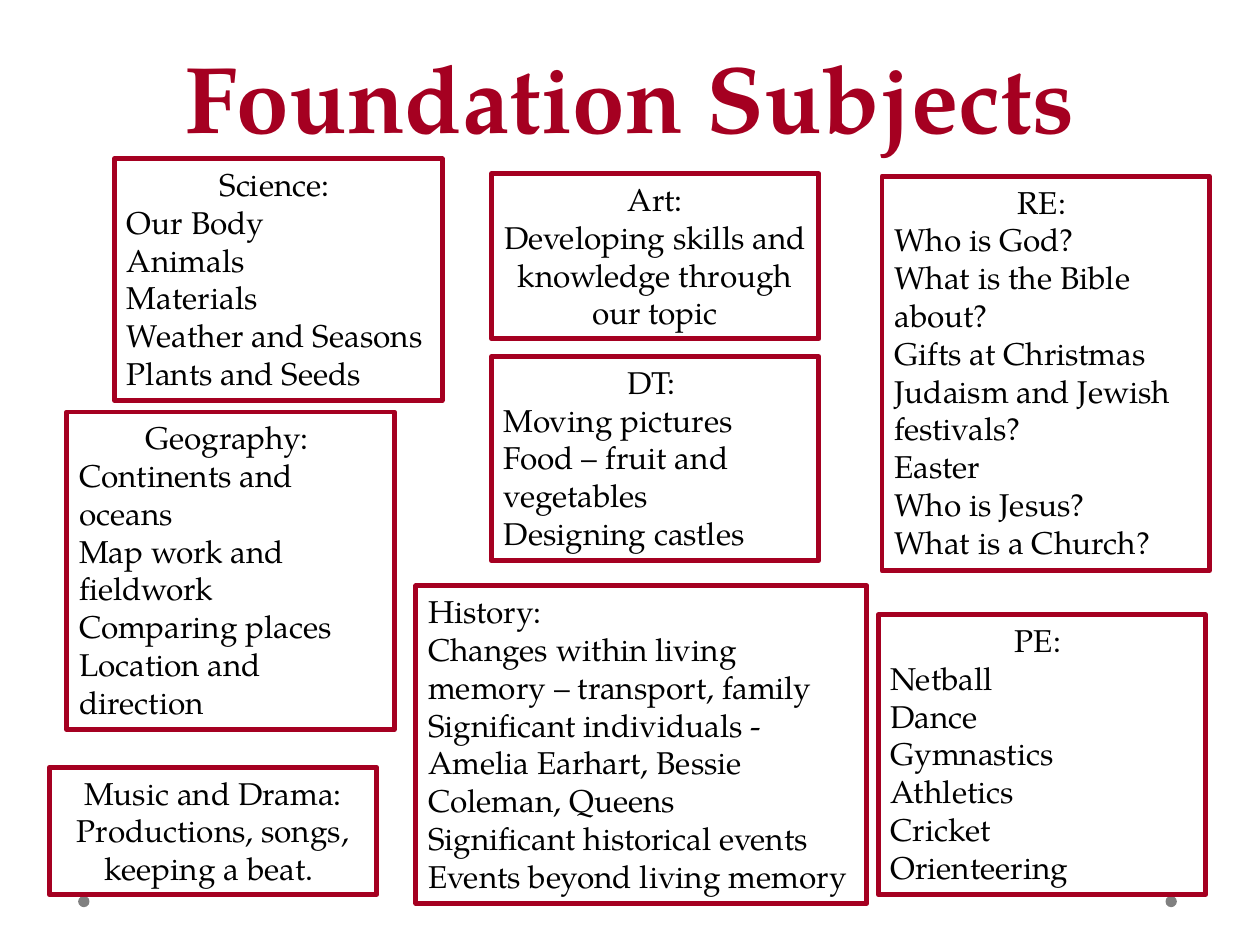
from dataclasses import dataclass

from pptx import Presentation
from pptx import util as u
from pptx.dml.color import RGBColor
from pptx.enum import shapes, text

FONT = "TeX Gyre Pagella"
CRIMSON, BLACK, GREY = "A50021", "000000", "808080"
BOX_WIDTH = 2.6
DOT_SIZE = 0.09


@dataclass
class Subject:
    left: float
    top: float
    height: float
    heading: str
    topics: list[str]
    width: float = BOX_WIDTH
    heading_align: text.PP_ALIGN = text.PP_ALIGN.CENTER
    topic_align: text.PP_ALIGN = text.PP_ALIGN.LEFT


SUBJECTS = [
    Subject(0.91, 1.26, 1.92, "Science: ",
            ["Our Body", "Animals", "Materials", "Weather and Seasons", "Plants and Seeds"]),
    Subject(3.9, 1.38, 1.31, "Art:",
            ["Developing skills and knowledge through our topic"],
            topic_align=text.PP_ALIGN.CENTER),
    Subject(7, 1.4, 3.13, "RE: ",
            ["Who is God?", "What is the Bible about?", "Gifts at Christmas",
             "Judaism and Jewish festivals?", "Easter", "Who is Jesus?", "What is a Church?"]),
    Subject(3.9, 2.83, 1.62, "DT: ",
            ["Moving pictures", "Food – fruit and vegetables", "Designing castles"]),
    Subject(0.53, 3.27, 2.52, "Geography: ",
            ["Continents and oceans", "Map work and fieldwork", "Comparing places",
             "Location and direction"]),
    Subject(0.39, 6.09, 1.01, "Music and Drama:",
            ["Productions, songs, keeping a beat. "],
            topic_align=text.PP_ALIGN.CENTER),
    Subject(6.97, 4.88, 2.22, "PE: ",
            ["Netball", "Dance", "Gymnastics", "Athletics", "Cricket", "Orienteering"]),
    Subject(3.3, 4.65, 2.52, "History:",
            ["Changes within living memory – transport, family",
             "Significant individuals - Amelia Earhart, Bessie Coleman, Queens",
             "Significant historical events", "Events beyond living memory"],
            width=3.58, heading_align=text.PP_ALIGN.LEFT),
]


def color(value: str) -> RGBColor:
    return RGBColor.from_string(value)


def style_font(para, size: float, value: str, bold: bool = False) -> None:
    para.font.name = FONT
    para.font.size = u.Pt(size)
    para.font.bold = bold
    para.font.color.rgb = color(value)


def add_dot(page, left: float) -> None:
    dot = page.shapes.add_shape(shapes.MSO_SHAPE.OVAL, u.Inches(left), u.Inches(7.11),
                                u.Inches(DOT_SIZE), u.Inches(DOT_SIZE))
    dot.shadow.inherit = False
    dot.fill.solid()
    dot.fill.fore_color.rgb = color(GREY)
    dot.line.fill.background()


def set_title(page, wording: str) -> None:
    title = page.shapes.title
    title.left, title.top = u.Inches(0.5), u.Inches(0)
    title.width, title.height = u.Inches(9), u.Inches(1.26)
    frame = title.text_frame
    frame.text = wording
    frame.auto_size = text.MSO_AUTO_SIZE.NONE
    frame.vertical_anchor = text.MSO_ANCHOR.BOTTOM
    para = frame.paragraphs[0]
    para.alignment = text.PP_ALIGN.CENTER
    para.line_spacing = u.Pt(58)
    style_font(para, 54, CRIMSON, bold=True)


def add_subject(page, subject: Subject) -> None:
    box = page.shapes.add_shape(shapes.MSO_SHAPE.RECTANGLE,
                                u.Inches(subject.left), u.Inches(subject.top),
                                u.Inches(subject.width), u.Inches(subject.height))
    box.shadow.inherit = False
    box.fill.background()
    box.line.color.rgb = color(CRIMSON)
    box.line.width = u.Pt(2.75)
    frame = box.text_frame
    frame.word_wrap = True
    frame.auto_size = text.MSO_AUTO_SIZE.SHAPE_TO_FIT_TEXT
    frame.vertical_anchor = text.MSO_ANCHOR.TOP
    frame.text = "\n".join([subject.heading, *subject.topics])
    for index, para in enumerate(frame.paragraphs):
        para.alignment = subject.topic_align if index else subject.heading_align
        style_font(para, 18, BLACK)


def main() -> None:
    deck = Presentation()
    deck.slide_width, deck.slide_height = u.Inches(10), u.Inches(7.5)
    page = deck.slides.add_slide(deck.slide_layouts.get_by_name("Title Only"))

    # Footer dots
    for left in (9.25, 0.62):
        add_dot(page, left)

    # Title and subject boxes
    set_title(page, "Foundation Subjects")
    for subject in SUBJECTS:
        add_subject(page, subject)

    deck.save("out.pptx")


if __name__ == "__main__":
    main()
